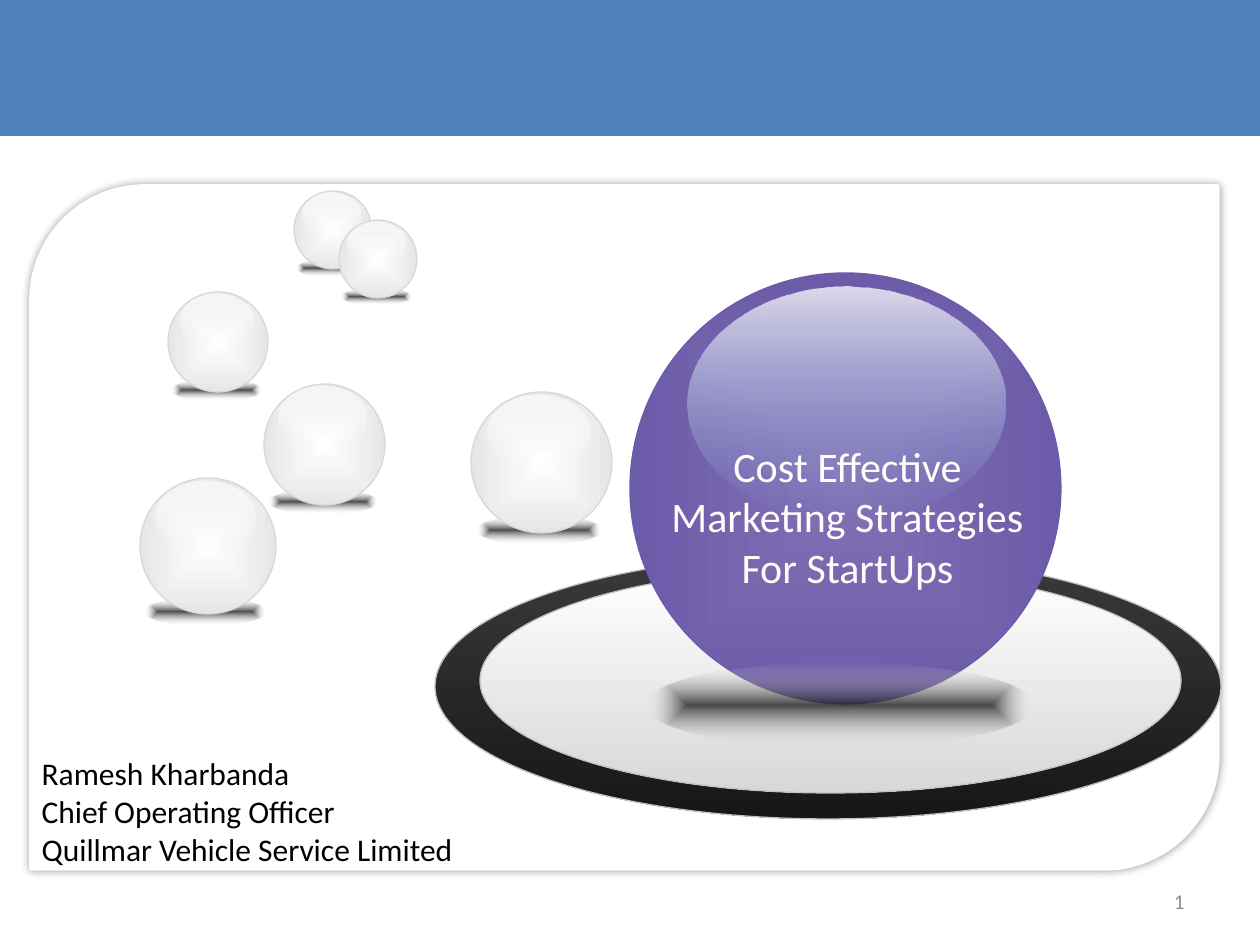
from pptx import Presentation
from pptx.dml.color import RGBColor as RGB
from pptx.enum.shapes import MSO_SHAPE as SHAPE
from pptx.enum.text import MSO_ANCHOR as ANCHOR, MSO_AUTO_SIZE as AUTO, PP_ALIGN as ALIGN
from pptx.oxml import parse_xml
from pptx.oxml.ns import nsdecls
from pptx.util import Pt

PX = 914400 / 126  # EMU in one px
THEME = {
    "font": "Calibri",
    "band": "4F81BD", "paper": "FFFFFF",
    "title": "FFFCF9", "author": "000000", "number": "8C8C8C",
    "ball_line": "D7D8D9", "plate_line": "C1C2C4", "hero_line": "6C5BA9",
    "title_pt": 24, "author_pt": 18, "number_pt": 12,
    # gradient stops: (colour, opacity in percent)
    "shade": [("171717", 76), ("FFFFFF", 0)],
    "ball": [("FFFFFF", 100), ("E6E6E6", 100)],
    "gloss": [("FFFCF9", 77), ("FFFFFF", 0)],
    "rim": [("3A3A3A", 100), ("171717", 100)],
    "plate": [("FFFFFF", 100), ("D7D8D9", 100)],
    "hero": [("8071B4", 100), ("6C5BA9", 100)],
    "hero_gloss": [("FFFFFF", 77), ("8EB4E3", 0)],
}
RADIAL = ('<a:path path="shape"><a:fillToRect l="50000" t="50000" '
          'r="50000" b="50000"/></a:path>')
DOWN = '<a:lin ang="5400000" scaled="0"/>'


def emu(*lengths):
    return [round(n * PX) for n in lengths]


def ellipse(shapes, box, stops, direction, line=None):
    sp = shapes.add_shape(SHAPE.OVAL, *emu(*box))
    sp.shadow.inherit = False
    gs = "".join(
        f'<a:gs pos="{pos}"><a:srgbClr val="{colour}">'
        f'<a:alpha val="{opacity * 1000}"/></a:srgbClr></a:gs>'
        for pos, (colour, opacity) in zip((0, 100000), THEME[stops]))
    sp.element.spPr.insert(2, parse_xml(
        f'<a:gradFill {nsdecls("a")} rotWithShape="1"><a:gsLst>{gs}</a:gsLst>'
        f'{direction}</a:gradFill>'))
    if line:
        sp.line.color.rgb = RGB.from_string(THEME[line])
        sp.line.width = Pt(0.75)
    else:
        sp.line.fill.background()


prs = Presentation()
prs.slide_width, prs.slide_height = emu(1260, 945)
s = prs.slides.add_slide(prs.slide_layouts[0])

# Header band
band = s.shapes.add_shape(SHAPE.RECTANGLE, *emu(0, 0, 1260, 136))
band.shadow.inherit = False
band.fill.solid()
band.fill.fore_color.rgb = RGB.from_string(THEME["band"])
band.line.fill.background()

# White panel with a soft shadow around it
panel = s.shapes.add_shape(SHAPE.ROUND_2_DIAG_RECTANGLE, *emu(31, 186, 1187, 683))
panel.fill.solid()
panel.fill.fore_color.rgb = RGB.from_string(THEME["paper"])
panel.line.color.rgb = RGB.from_string(THEME["paper"])
panel.line.width = Pt(2)
panel.element.spPr.append(parse_xml(
    f'<a:effectLst {nsdecls("a")}><a:outerShdw blurRad="63500" dist="0" dir="0" '
    'algn="ctr" rotWithShape="0"><a:srgbClr val="000000"><a:alpha val="40000"/>'
    '</a:srgbClr></a:outerShdw></a:effectLst>'))

# Small balls: left, top, diameter
for x, y, d in [(471, 392, 141), (264, 384, 121), (168, 292, 100),
                (140, 478, 136), (294, 191, 78), (339, 220, 78)]:
    ball = s.shapes.add_group_shape().shapes
    shade = [round(n) for n in (x + 0.04 * d, y + 0.88 * d, 0.89 * d, 0.2 * d)]
    gloss = [round(n) for n in (x + 0.12 * d, y + 0.02 * d, 0.73 * d, 0.54 * d)]
    ellipse(ball, shade, "shade", RADIAL)
    ellipse(ball, (x, y, d, d), "ball", RADIAL, "ball_line")
    ellipse(ball, gloss, "gloss", DOWN)

# Plate
plate = s.shapes.add_group_shape().shapes
ellipse(plate, (435, 554, 786, 265), "rim", DOWN, "plate_line")
ellipse(plate, (480, 568, 701, 225), "plate", DOWN, "plate_line")

# Large ball
hero = s.shapes.add_group_shape().shapes
ellipse(hero, (630, 273, 431, 431), "hero", RADIAL, "hero_line")
ellipse(hero, (688, 287, 318, 233), "hero_gloss", DOWN)
ellipse(hero, (646, 663, 387, 84), "shade", RADIAL)

# Title on the large ball, author at the lower left
title, author = s.shapes.title, s.placeholders[1]
for sp, box, style, align, lines in [
    (title, (620, 434, 455, 166), "title", ALIGN.CENTER,
     ["Cost Effective", "Marketing Strategies", "For StartUps"]),
    (author, (29, 748, 512, 127), "author", ALIGN.LEFT,
     ["Ramesh Kharbanda", "Chief Operating Officer",
      "Quillmar Vehicle Service Limited"]),
]:
    sp.left, sp.top, sp.width, sp.height = emu(*box)
    s.shapes.element.append(sp.element)  # bring to front
    tf = sp.text_frame
    tf.word_wrap = True
    tf.auto_size = AUTO.NONE
    tf.vertical_anchor = ANCHOR.TOP
    for i, text in enumerate(lines):
        p = tf.add_paragraph() if i else tf.paragraphs[0]
        p.alignment = align
        p.space_before = Pt(0)
        r = p.add_run()
        r.text = text
        r.font.name = THEME["font"]
        r.font.size = Pt(THEME[style + "_pt"])
        r.font.color.rgb = RGB.from_string(THEME[style])

# Slide number field
number = s.shapes.add_textbox(*emu(955, 876, 242, 50))
tf = number.text_frame
tf.word_wrap = True
tf.vertical_anchor = ANCHOR.MIDDLE
p = tf.paragraphs[0]
p.alignment = ALIGN.RIGHT
p._p.append(parse_xml(
    f'<a:fld {nsdecls("a")} id="{{B6F15528-21DE-4FAA-801E-634DDDAF4B2B}}" '
    f'type="slidenum"><a:rPr lang="en-US" sz="{THEME["number_pt"] * 100}">'
    f'<a:solidFill><a:srgbClr val="{THEME["number"]}"/></a:solidFill>'
    f'<a:latin typeface="{THEME["font"]}"/></a:rPr><a:t>1</a:t></a:fld>'))

prs.save("out.pptx")
